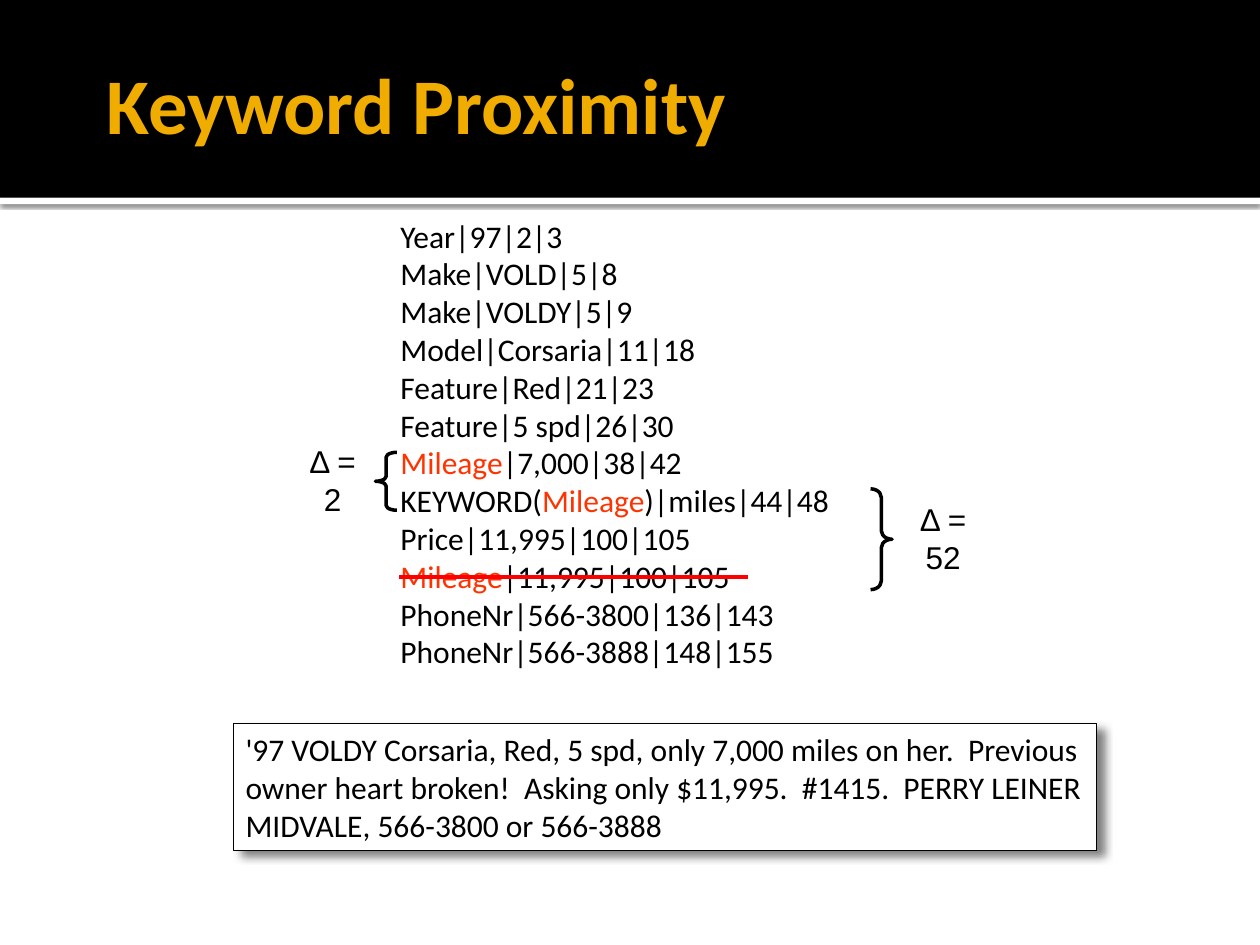
from dataclasses import dataclass
from typing import Optional

from lxml import etree
from pptx import Presentation
from pptx.dml.color import RGBColor
from pptx.enum import shapes, text
from pptx.oxml import ns
from pptx.util import Inches, Pt

COLORS = {"black": "000000", "white": "FFFFFF", "gold": "F0AD00",
          "keyword": "FF3300", "strike": "FF0000"}
BODY = {"name": "Calibri", "size": Pt(18)}
LABEL = {"name": "Arial", "size": Pt(18)}
TITLE = {"name": "Calibri", "size": Pt(45), "bold": True}
KEYWORD = "Mileage"


@dataclass
class Area:
    left: float
    top: float
    width: float
    height: float

    def lengths(self) -> list:
        return [Inches(v) for v in (self.left, self.top, self.width, self.height)]


@dataclass
class Shadow:
    alpha: int
    blur: float
    distance: float
    angle: int


@dataclass
class Gap:
    """A brace and the distance it measures."""
    kind: shapes.MSO_SHAPE
    brace: Area
    curl: float
    label: str
    label_area: Area


RECORDS = [
    "Year|97|2|3",
    "Make|VOLD|5|8",
    "Make|VOLDY|5|9",
    "Model|Corsaria|11|18",
    "Feature|Red|21|23",
    "Feature|5 spd|26|30",
    "Mileage|7,000|38|42",
    "KEYWORD(Mileage)|miles|44|48",
    "Price|11,995|100|105",
    "Mileage|11,995|100|105",
    "PhoneNr|566-3800|136|143",
    "PhoneNr|566-3888|148|155",
]
ADVERT = ("'97 VOLDY Corsaria, Red, 5 spd, only 7,000 miles on her.  Previous "
          "owner heart broken!  Asking only $11,995.  #1415.  PERRY LEINER "
          "MIDVALE, 566-3800 or 566-3888")
GAPS = [
    Gap(shapes.MSO_SHAPE.LEFT_BRACE, Area(2.98, 3.59, 0.17, 0.46), 0.228,
        "Δ = 2", Area(2.32, 3.61, 0.64, 0.4)),
    Gap(shapes.MSO_SHAPE.RIGHT_BRACE, Area(6.91, 3.88, 0.17, 0.8), 0.398,
        "Δ = 52", Area(7.1, 4.07, 0.77, 0.4)),
]


def rgb(color: str) -> RGBColor:
    return RGBColor.from_string(COLORS[color])


def add_effects(shape, shadow: Optional[Shadow] = None) -> None:
    """Give the shape its own effect list, empty or with one shadow."""
    properties = shape._element.spPr
    for old in properties.findall(ns.qn("a:effectLst")):
        properties.remove(old)
    effects = etree.SubElement(properties, ns.qn("a:effectLst"))
    if shadow:
        outer = etree.SubElement(
            effects, ns.qn("a:outerShdw"), blurRad=str(Pt(shadow.blur)),
            dist=str(Pt(shadow.distance)), dir=str(shadow.angle * 60000),
            algn="tl", rotWithShape="0")
        tint = etree.SubElement(outer, ns.qn("a:srgbClr"), val=COLORS["black"])
        etree.SubElement(tint, ns.qn("a:alpha"), val=str(shadow.alpha * 1000))


def add_shape(page, kind, area: Area, fill: Optional[str] = None,
              line: Optional[float] = None, shadow: Optional[Shadow] = None):
    shape = page.shapes.add_shape(kind, *area.lengths())
    if fill:
        shape.fill.solid()
        shape.fill.fore_color.rgb = rgb(fill)
    else:
        shape.fill.background()
    if line:
        shape.line.color.rgb = rgb("black")
        shape.line.width = Pt(line)
    else:
        shape.line.fill.background()
    add_effects(shape, shadow)
    return shape


def add_span(para, words: str, font: dict, color: str = "black") -> None:
    span = para.add_run()
    span.text = words
    for name, value in font.items():
        setattr(span.font, name, value)
    span.font.color.rgb = rgb(color)


def format_frame(frame, **values) -> None:
    settings = {"word_wrap": True, "vertical_anchor": text.MSO_ANCHOR.MIDDLE, **values}
    for name, value in settings.items():
        setattr(frame, name, value)


def add_box(page, area: Area, **values):
    frame = page.shapes.add_textbox(*area.lengths()).text_frame
    format_frame(frame, **values)
    return frame


def add_records(page, area: Area) -> None:
    frame = add_box(page, area, vertical_anchor=text.MSO_ANCHOR.TOP)
    for index, record in enumerate(RECORDS):
        para = frame.add_paragraph() if index else frame.paragraphs[0]
        before, found, after = record.partition(KEYWORD)
        for words, color in ((before, "black"), (found, "keyword"), (after, "black")):
            if words:
                add_span(para, words, BODY, color)


def add_gap(page, gap: Gap) -> None:
    brace = add_shape(page, gap.kind, gap.brace, line=2)
    brace.adjustments[0] = gap.curl
    inset = Inches(0.05)
    frame = add_box(page, gap.label_area, margin_left=inset, margin_right=inset)
    para = frame.paragraphs[0]
    para.alignment = text.PP_ALIGN.CENTER
    add_span(para, gap.label, LABEL)


def main() -> None:
    deck = Presentation()
    deck.slide_width, deck.slide_height = Inches(10), Inches(7.5)
    page = deck.slides.add_slide(deck.slide_layouts[6])
    rectangle = shapes.MSO_SHAPE.RECTANGLE

    # Header band with its white edge
    add_shape(page, rectangle, Area(0, 1.57, 10, 0.05), "white",
              shadow=Shadow(60, 2.5, 0.8, 90))
    add_shape(page, rectangle, Area(0, 0, 10, 1.57), "black")
    title = add_box(page, Area(0.75, 0.19, 8.5, 1.25), margin_right=Inches(0.05))
    add_span(title.paragraphs[0], "Keyword Proximity", TITLE, "gold")

    # Extracted records and the distances to the keyword
    add_records(page, Area(3.08, 1.67, 3.87, 3.7))
    for gap in GAPS:
        add_gap(page, gap)

    # Strike through the rejected record
    strike = page.shapes.add_connector(
        shapes.MSO_CONNECTOR.STRAIGHT,
        Inches(3.17), Inches(4.58), Inches(5.94), Inches(4.58))
    strike.line.color.rgb = rgb("strike")
    strike.line.width = Pt(2)
    add_effects(strike)

    # Advertisement
    advert = add_shape(page, rectangle, Area(1.85, 5.74, 6.85, 1.01), "white",
                       line=0.25, shadow=Shadow(50, 5, 5, 37))
    format_frame(advert.text_frame)
    para = advert.text_frame.paragraphs[0]
    para.alignment = text.PP_ALIGN.LEFT
    add_span(para, ADVERT, BODY)

    deck.save("out.pptx")


if __name__ == "__main__":
    main()
